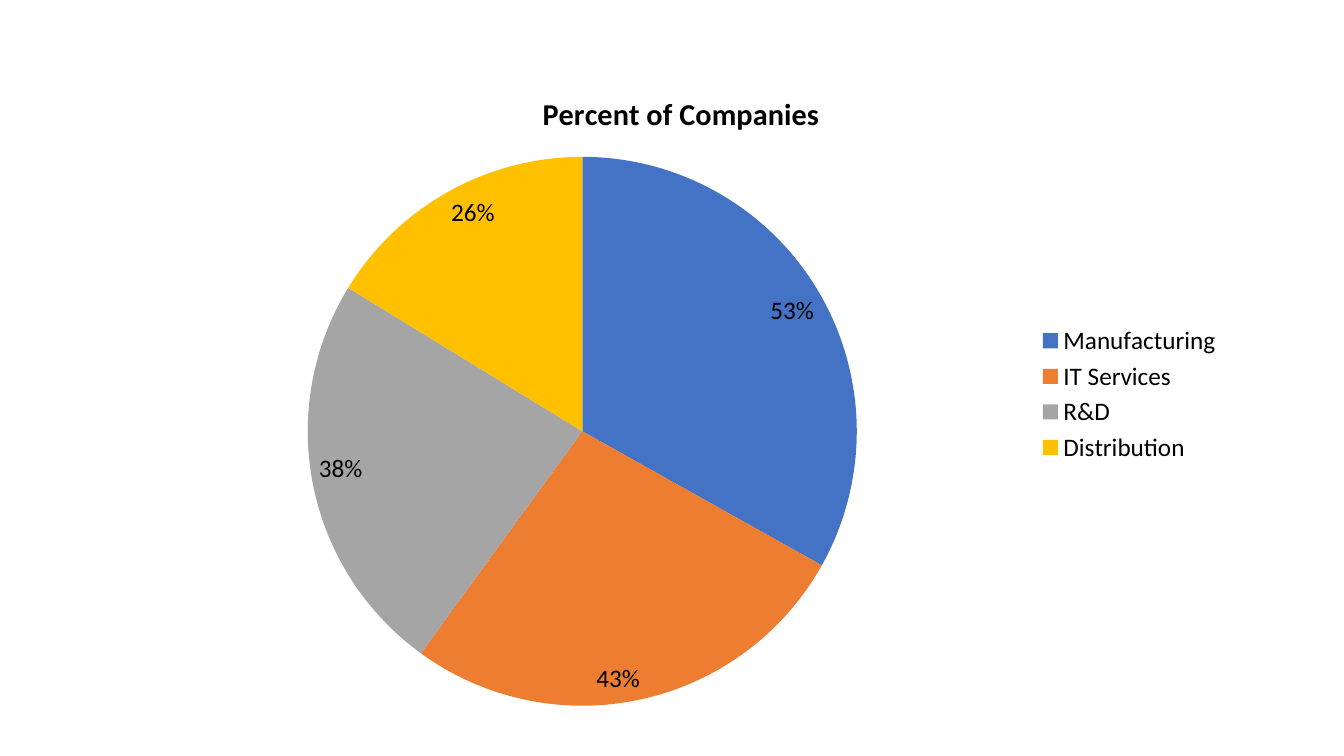
"""Build a slide with a pie chart of company shares by sector."""
from dataclasses import dataclass

from pptx import Presentation
from pptx.chart.data import CategoryChartData
from pptx.dml.color import RGBColor
from pptx.enum.chart import XL_CHART_TYPE, XL_LABEL_POSITION, XL_LEGEND_POSITION
from pptx.util import Inches, Pt


@dataclass(frozen=True)
class Theme:
    font: str = "Calibri"
    text: str = "000000"
    body_size: float = 18
    title_size: float = 21.6


theme = Theme()
sectors = [
    ("Manufacturing", 0.53, "4472C4"),
    ("IT Services", 0.43, "ED7D31"),
    ("R&D", 0.38, "A5A5A5"),
    ("Distribution", 0.26, "FFC000"),
]


def style(font, size, bold=False):
    font.name = theme.font
    font.size = Pt(size)
    font.bold = bold
    font.color.rgb = RGBColor.from_string(theme.text)


presentation = Presentation()
presentation.slide_width = Inches(13.33)
presentation.slide_height = Inches(7.5)
slide = presentation.slides.add_slide(presentation.slide_layouts[6])

shares = CategoryChartData(number_format="0%")
shares.categories = [name for name, share, color in sectors]
shares.add_series("Percent of Companies", [share for name, share, color in sectors])

companies = slide.shapes.add_chart(
    XL_CHART_TYPE.PIE, Inches(1.29), Inches(0.68), Inches(10.93), Inches(6.46), shares
).chart
style(companies.font, theme.body_size)

companies.has_title = True
heading = companies.chart_title.text_frame
heading.text = "Percent of Companies"
style(heading.paragraphs[0].runs[0].font, theme.title_size, bold=True)
companies.chart_title.include_in_layout = False

companies.has_legend = True
companies.legend.position = XL_LEGEND_POSITION.RIGHT
companies.legend.include_in_layout = False
style(companies.legend.font, theme.body_size)

pie = companies.plots[0]
pie.vary_by_categories = True
pie.has_data_labels = True
percentages = pie.data_labels
percentages.show_value = True
percentages.show_percentage = False
percentages.number_format = "0%"
percentages.number_format_is_linked = False
percentages.position = XL_LABEL_POSITION.INSIDE_END
style(percentages.font, theme.body_size)

for index, (name, share, color) in enumerate(sectors):
    wedge = pie.series[0].points[index].format
    wedge.fill.solid()
    wedge.fill.fore_color.rgb = RGBColor.from_string(color)
    wedge.line.fill.background()

presentation.save("out.pptx")
